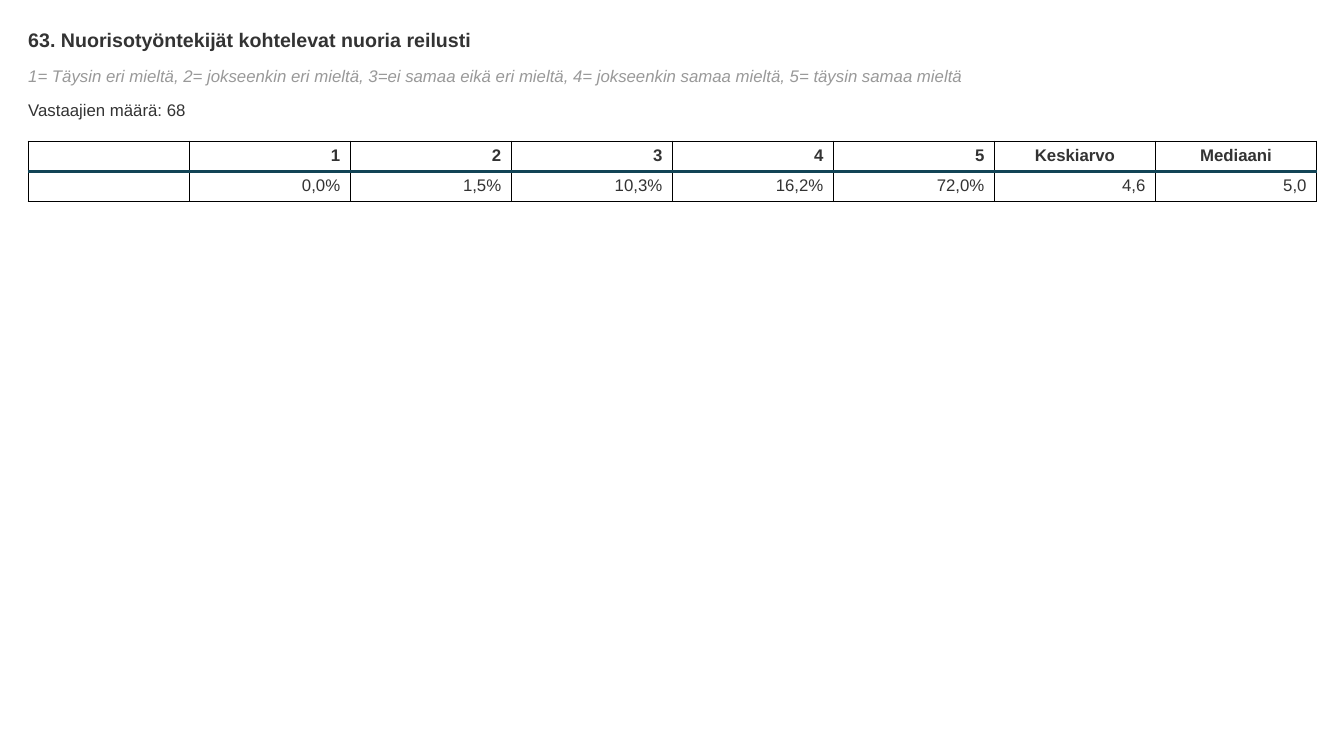
from lxml import etree
from pptx import Presentation
from pptx.dml.color import RGBColor
from pptx.enum.text import PP_ALIGN
from pptx.oxml.ns import qn
from pptx.util import Inches, Pt

LEFT, CENTER, RIGHT = PP_ALIGN.LEFT, PP_ALIGN.CENTER, PP_ALIGN.RIGHT
DARK = RGBColor(0x33, 0x33, 0x33)
GREY = RGBColor(0x99, 0x99, 0x99)
TEAL = RGBColor(0x12, 0x44, 0x56)
BLACK = RGBColor(0, 0, 0)
WHITE = RGBColor(255, 255, 255)
FONT = "Arial"

HEADINGS = [
    ("63. Nuorisotyöntekijät kohtelevat nuoria reilusti", 0.28, 0.23, 14, DARK, True, False),
    ("1= Täysin eri mieltä, 2= jokseenkin eri mieltä, 3=ei samaa eikä eri mieltä, "
     "4= jokseenkin samaa mieltä, 5= täysin samaa mieltä", 0.65, 0.2, 12, GREY, False, True),
    ("Vastaajien määrä: 68", 0.99, 0.2, 12, DARK, False, False),
]
ROWS = [
    ["", "1", "2", "3", "4", "5", "Keskiarvo", "Mediaani"],
    ["", "0,0%", "1,5%", "10,3%", "16,2%", "72,0%", "4,6", "5,0"],
]
MARGIN, CONTENT_WIDTH = 0.28, 12.78
TABLE_TOP, ROW_HEIGHT = 1.4, 0.3
TEXT_SIZE = 12


def write(paragraph, text, size, color, bold=False, italic=False, alignment=LEFT):
    paragraph.text = text
    paragraph.alignment = alignment
    for run in paragraph.runs:
        font = run.font
        font.name, font.size, font.bold, font.italic = FONT, Pt(size), bold, italic
        font.color.rgb = color


def add_heading(slide, text, top, height, size, color, bold, italic):
    box = slide.shapes.add_textbox(
        Inches(MARGIN), Inches(top), Inches(CONTENT_WIDTH), Inches(height))
    frame = box.text_frame
    frame.word_wrap = True
    frame.margin_left = frame.margin_right = frame.margin_top = frame.margin_bottom = 0
    write(frame.paragraphs[0], text, size, color, bold, italic)


def set_borders(cell, borders):
    properties = cell._tc.get_or_add_tcPr()
    for position, (side, (color, width)) in enumerate(borders.items()):
        line = etree.Element(qn(f"a:ln{side}"), w=str(Pt(width)))
        fill = etree.SubElement(line, qn("a:solidFill"))
        etree.SubElement(fill, qn("a:srgbClr"), val=str(color))
        properties.insert(position, line)


def add_results(slide):
    frame = slide.shapes.add_table(
        len(ROWS), len(ROWS[0]), Inches(MARGIN), Inches(TABLE_TOP),
        Inches(CONTENT_WIDTH), Inches(ROW_HEIGHT * len(ROWS)))
    table = frame.table
    table.first_row = table.horz_banding = False
    for row, values in enumerate(ROWS):
        header = row == 0
        for column, value in enumerate(values):
            cell = table.cell(row, column)
            cell.fill.solid()
            cell.fill.fore_color.rgb = WHITE
            paragraph = cell.text_frame.paragraphs[0]
            centered = header and value.isalpha()
            write(paragraph, value, TEXT_SIZE, DARK, header,
                  alignment=CENTER if centered else RIGHT)
            if not value:
                etree.SubElement(paragraph._p, qn("a:endParaRPr"), sz=str(TEXT_SIZE * 100))
            borders = dict.fromkeys("LRTB", (BLACK, 1))
            borders["B" if header else "T"] = (TEAL, 2)
            set_borders(cell, borders)


def main():
    """Build the survey result slide."""
    presentation = Presentation()
    presentation.slide_width, presentation.slide_height = Inches(13.33), Inches(7.5)
    slide = presentation.slides.add_slide(presentation.slide_layouts[6])
    for heading in HEADINGS:
        add_heading(slide, *heading)
    add_results(slide)
    presentation.save("out.pptx")


if __name__ == "__main__":
    main()
